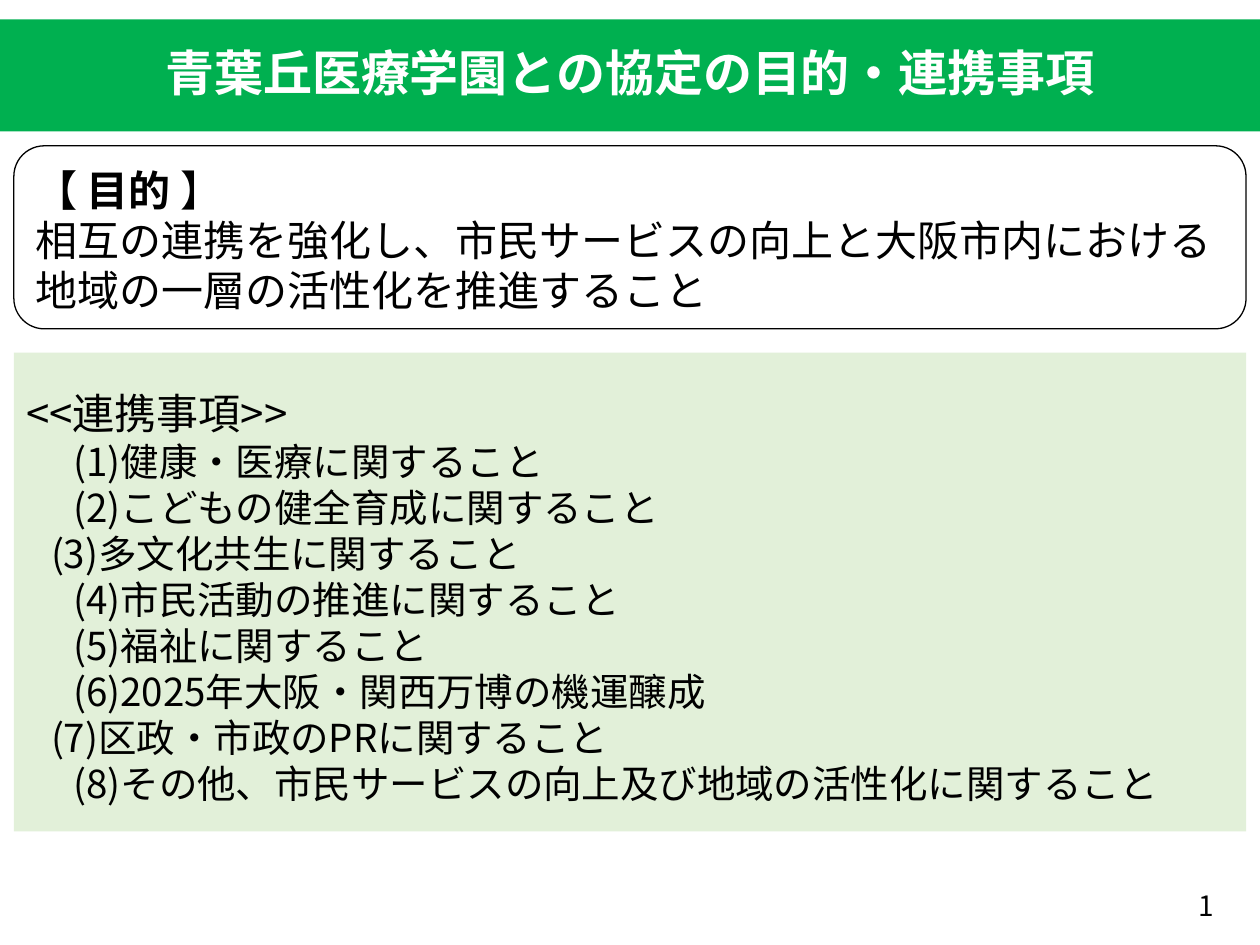
from dataclasses import dataclass
from pptx import Presentation
from pptx.dml.color import RGBColor as Rgb
from pptx.enum import shapes, text
from pptx.oxml import parse_xml
from pptx.oxml.ns import nsdecls
from pptx.util import Cm, Pt


@dataclass
class Theme:
    font: str = "Noto Sans CJK JP"
    green: str = "00B050"
    pale: str = "E2F0D9"
    white: str = "FFFFFF"
    black: str = "000000"
    title: int = 28
    head: int = 24
    item: int = 22
    page: int = 16


theme = Theme()


def add_box(kind, left, top, width, height, fill=None, line=None):
    box = slide.shapes.add_shape(kind, Cm(left), Cm(top), Cm(width), Cm(height))
    box.shadow.inherit = False
    if fill:
        box.fill.solid()
        box.fill.fore_color.rgb = Rgb.from_string(fill)
    else:
        box.fill.background()
    if line:
        box.line.color.rgb = Rgb.from_string(line)
        box.line.width = Pt(0.75)
    else:
        box.line.fill.background()
    frame = box.text_frame
    frame.word_wrap = True
    frame.vertical_anchor = text.MSO_ANCHOR.TOP
    frame.margin_top = Cm(0.21)
    return frame


def style(para, size, color=theme.black, bold=False, align=text.PP_ALIGN.LEFT):
    para.alignment = align
    for run in para.runs:
        font = run.font
        font.name, font.size, font.bold = theme.font, Pt(size), bold
        font.color.rgb = Rgb.from_string(color)
        east = parse_xml(f'<a:ea {nsdecls("a")} typeface="{theme.font}"/>')
        font._element.find("{*}latin").addnext(east)


deck = Presentation()
deck.slide_width, deck.slide_height = Cm(25.4), Cm(19.05)
slide = deck.slides.add_slide(deck.slide_layouts[6])
rect = shapes.MSO_SHAPE.RECTANGLE
left, width = 0.28, 24.84

title = add_box(rect, 0, 0.39, 25.4, 2.26, fill=theme.green)
title.word_wrap = False
title.vertical_anchor = text.MSO_ANCHOR.MIDDLE
title.margin_top = Cm(0.13)
title.text = "青葉丘医療学園との協定の目的・連携事項"
title.paragraphs[0].line_spacing = 0.9
style(title.paragraphs[0], theme.title, theme.white, True, text.PP_ALIGN.CENTER)

page = slide.shapes.add_textbox(Cm(19), Cm(17.75), Cm(5.72), Cm(1.02)).text_frame
page.word_wrap = True
page.vertical_anchor = text.MSO_ANCHOR.MIDDLE
page.text = "1"
style(page.paragraphs[0], theme.page, align=text.PP_ALIGN.RIGHT)

items = [
    "健康・医療に関すること",
    "こどもの健全育成に関すること",
    "多文化共生に関すること",
    "市民活動の推進に関すること",
    "福祉に関すること",
    "2025年大阪・関西万博の機運醸成",
    "区政・市政のPRに関すること",
    "その他、市民サービスの向上及び地域の活性化に関すること",
]
scope = add_box(rect, left, 7.11, width, 9.65, fill=theme.pale)
scope.text = "<<連携事項>>"
scope.paragraphs[0].line_spacing = Pt(43)
style(scope.paragraphs[0], theme.head)
for num, item in enumerate(items, 1):
    para = scope.add_paragraph()
    para.text = f"({num}){item}"
    para.line_spacing = Pt(26.3)
    indent = 0.5 if num in (3, 7) else 0.95
    para._p.get_or_add_pPr().set("marL", str(Cm(indent)))
    style(para, theme.item)

goal = add_box(shapes.MSO_SHAPE.ROUNDED_RECTANGLE, left, 2.94, width, 3.69, line=theme.black)
goal.text = "【 目的 "
goal.paragraphs[0].add_run().text = "】"
style(goal.paragraphs[0], theme.head, bold=True)
goal.paragraphs[0].runs[1].font.bold = False
body = goal.add_paragraph()
body.text = "相互の連携を強化し、市民サービスの向上と大阪市内における地域の一層の活性化を推進すること"
style(body, theme.head)
for para in goal.paragraphs:
    para.line_spacing = Pt(28.6)

deck.save("out.pptx")
